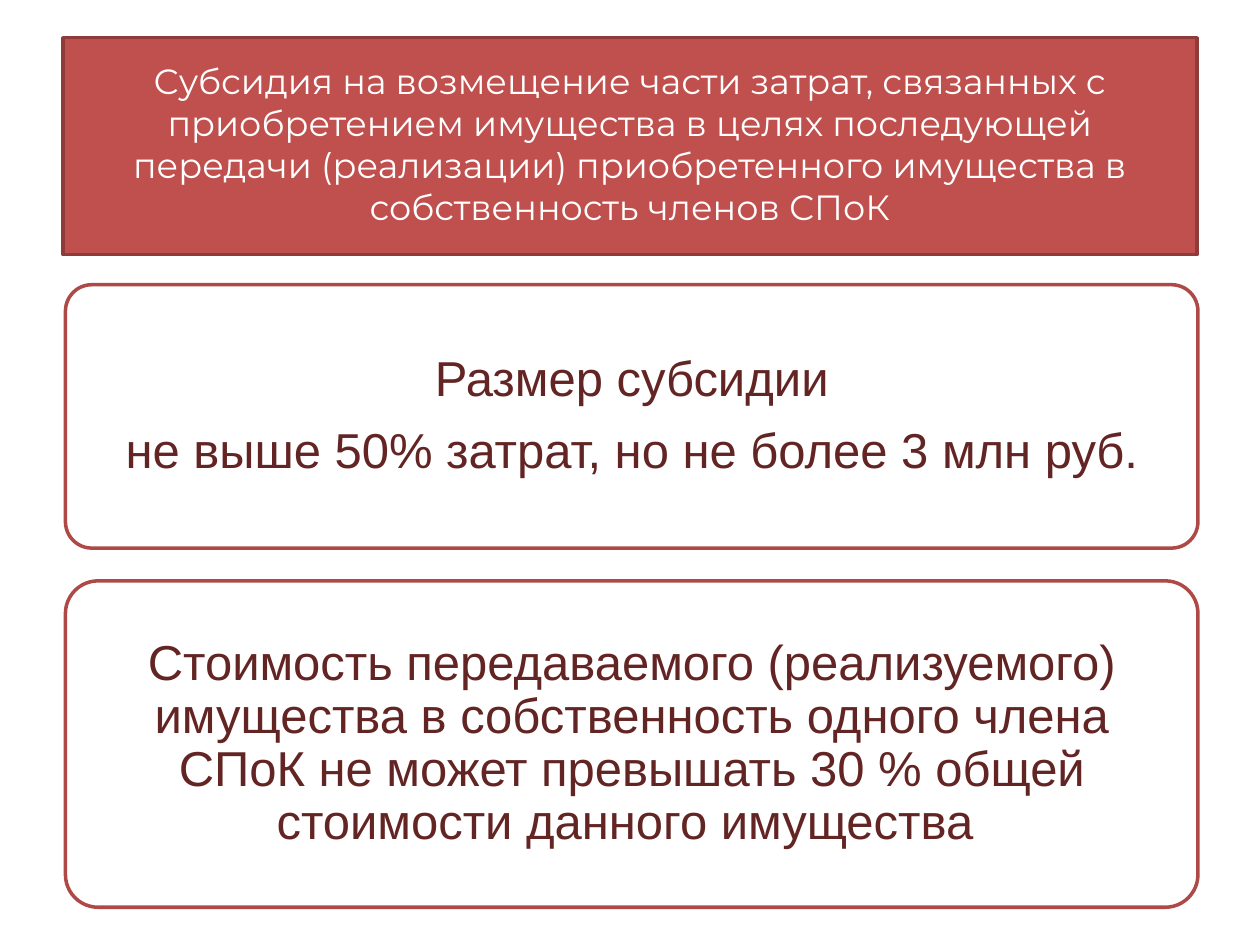
from dataclasses import dataclass

from pptx import Presentation
from pptx.dml.color import RGBColor
from pptx.enum.shapes import MSO_SHAPE as Shape
from pptx.enum.text import MSO_ANCHOR as Anchor, MSO_AUTO_SIZE as Fit, PP_ALIGN as Align
from pptx.util import Cm, Pt

RED = RGBColor(0xC0, 0x50, 0x4D)
EDGE = RGBColor(0x8E, 0x3B, 0x39)
RIM = RGBColor(0xAE, 0x49, 0x46)
DARK = RGBColor(0x63, 0x25, 0x23)
WHITE = RGBColor(0xFF, 0xFF, 0xFF)

TITLE = (
    "Субсидия на возмещение части затрат, связанных с приобретением "
    "имущества в целях последующей передачи (реализации) приобретенного "
    "имущества в собственность членов СПоК"
)


@dataclass
class Card:
    top: float
    height: float
    lines: list[str]


CARDS = [
    Card(5.74, 5.31, ["Размер субсидии", "не выше 50% затрат, но не более 3 млн руб."]),
    Card(11.71, 6.58, [
        "Стоимость передаваемого (реализуемого) имущества в собственность "
        "одного члена СПоК не может превышать 30 % общей стоимости данного "
        "имущества "
    ]),
]


def paint(shape, fill: RGBColor, line: RGBColor) -> None:
    shape.fill.solid()
    shape.fill.fore_color.rgb = fill
    shape.line.color.rgb = line
    shape.line.width = Pt(2)


def style(para, name: str, size: int, color: RGBColor) -> None:
    para.alignment = Align.CENTER
    para.font.name = name
    para.font.size = Pt(size)
    para.font.color.rgb = color


def draw_title(title) -> None:
    title.left, title.top = Cm(1.27), Cm(0.76)
    title.width, title.height = Cm(22.86), Cm(4.37)
    paint(title, RED, EDGE)
    frame = title.text_frame
    frame.text = TITLE
    frame.word_wrap = True
    frame.auto_size = Fit.NONE
    frame.vertical_anchor = Anchor.MIDDLE
    frame.margin_bottom = Cm(0.25)
    style(frame.paragraphs[0], "Montserrat", 20, WHITE)


def draw_card(slide, card: Card) -> None:
    box = slide.shapes.add_shape(
        Shape.ROUNDED_RECTANGLE, Cm(1.32), Cm(card.top), Cm(22.83), Cm(card.height)
    )
    box.adjustments[0] = 0.1
    box.shadow.inherit = False
    paint(box, WHITE, RIM)

    frame = box.text_frame
    frame.word_wrap = True
    frame.vertical_anchor = Anchor.MIDDLE
    frame.margin_left = frame.margin_right = Cm(0.3)
    frame.margin_top = frame.margin_bottom = Cm(0.3)
    frame.text = "\n".join(card.lines)
    for i, para in enumerate(frame.paragraphs):
        style(para, "Arial", 28, DARK)
        para.line_spacing = 0.9
        para.space_before = Pt(11 if i else 0)


def main() -> None:
    deck = Presentation()
    deck.slide_width, deck.slide_height = Cm(25.4), Cm(19.05)
    # Title-only layout
    slide = deck.slides.add_slide(deck.slide_layouts[5])
    draw_title(slide.shapes.title)
    # Conditions of the subsidy
    for card in CARDS:
        draw_card(slide, card)
    deck.save("out.pptx")


if __name__ == "__main__":
    main()
